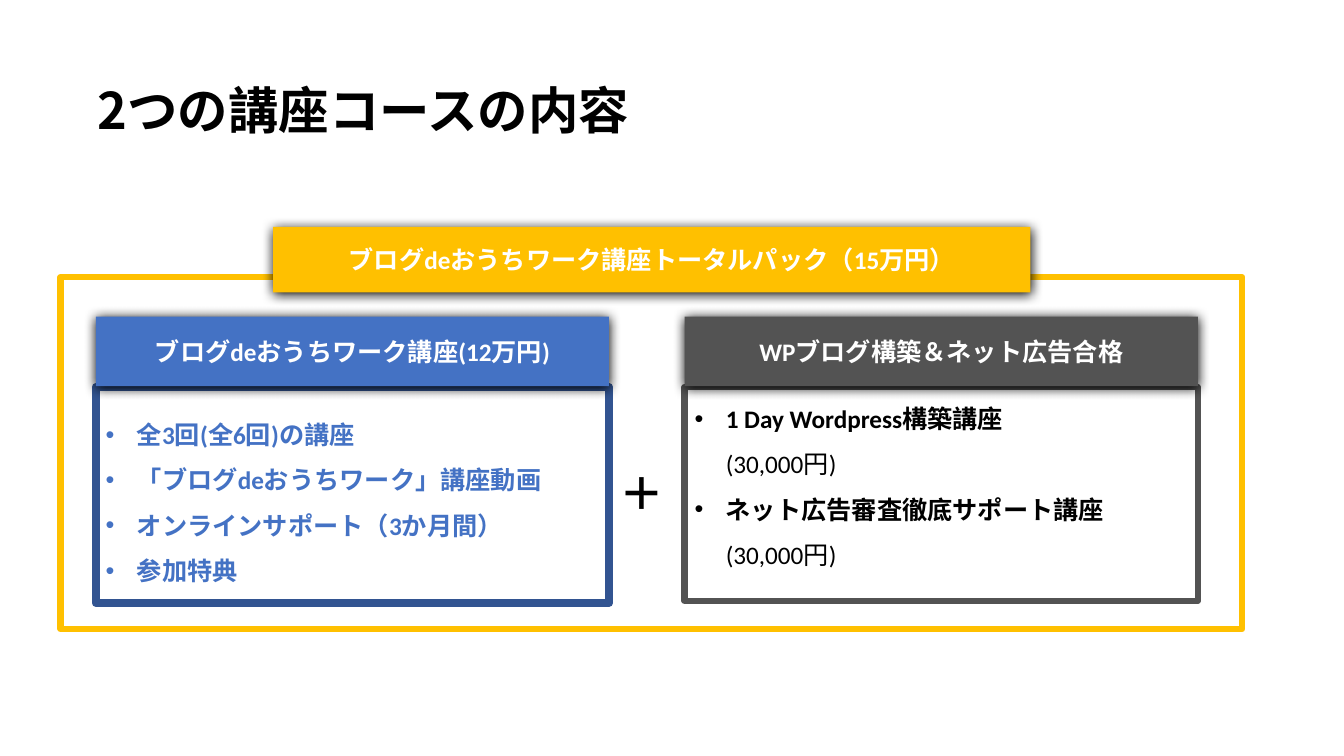
from lxml.etree import SubElement as Sub
from pptx import Presentation
from pptx.dml.color import RGBColor
from pptx.enum.shapes import MSO_SHAPE as Kind
from pptx.enum.text import MSO_ANCHOR as Anchor, PP_ALIGN as Align
from pptx.oxml.ns import qn
from pptx.util import Inches, Pt


def paint(form, tone):
    if hasattr(form, "solid"):
        form.solid()
        form = form.fore_color
    form.rgb = RGBColor.from_string(tone)


def write(para, text, tone, size=18, face="Calibri", bold=True):
    run = para.add_run()
    run.text = text
    look = {"name": face, "size": Pt(size), "bold": bold}
    for key, value in look.items():
        setattr(run.font, key, value)
    paint(run.font.color, tone)
    Sub(run.font._element, qn("a:ea"), typeface="Noto Sans CJK JP")


deck = Presentation()
deck.slide_width, deck.slide_height = Inches(13.33), Inches(7.5)
slide = deck.slides.add_slide(deck.slide_layouts[6])
shapes = slide.shapes

cards = [
    (0.95, 2.14, "325491", 6, "4472C4", 0.05, [
        ("全3回(全6回)の講座", ""),
        ("「ブログdeおうちワーク」講座動画", ""),
        ("オンラインサポート（3か月間）", ""),
        ("参加特典", ""),
    ]),
    (6.79, 2.12, "535353", 4.5, "000000", 0.35, [
        ("1 Day Wordpress構築講座", "(30,000円)"),
        ("ネット広告審査徹底サポート講座", "(30,000円)"),
    ]),
]
for left, high, edge, width, ink, base, items in cards:
    card = shapes.add_shape(Kind.RECTANGLE, Inches(left), Inches(3.84), Inches(5.09), Inches(high))
    card.shadow.inherit = False
    paint(card.fill, "FFFFFF")
    paint(card.line.color, edge)
    card.line.width = Pt(width)
    body = card.text_frame
    look = {"word_wrap": True, "vertical_anchor": Anchor.MIDDLE, "margin_bottom": Inches(base)}
    for key, value in look.items():
        setattr(body, key, value)
    for spot, (text, price) in enumerate(items):
        para = body.add_paragraph() if spot else body.paragraphs[0]
        para.alignment = Align.LEFT
        para.line_spacing = 1.5
        props = para._p.get_or_add_pPr()
        props.set("marL", str(Inches(0.31)))
        props.set("indent", str(-Inches(0.31)))
        Sub(props, qn("a:buFont"), typeface="Arial")
        Sub(props, qn("a:buChar"), char="•")
        write(para, text, ink)
        if price:
            para.add_line_break()
            write(para, price, ink, bold=False)

labels = [
    (0.92, 0.4, 11.5, 1.45, "2つの講座コースの内容", 36, "Noto Sans CJK JP", 0.9,
     {"word_wrap": True, "vertical_anchor": Anchor.MIDDLE,
      "margin_left": Inches(0.05), "margin_right": Inches(0.05)}),
    (6.05, 4.57, 0.65, 0.64, "＋", 32, "Calibri", 1, {"word_wrap": False}),
]
for left, top, wide, high, text, size, face, space, look in labels:
    box = shapes.add_textbox(Inches(left), Inches(top), Inches(wide), Inches(high))
    for key, value in look.items():
        setattr(box.text_frame, key, value)
    para = box.text_frame.paragraphs[0]
    para.line_spacing = space
    write(para, text, "000000", size, face)

frame = shapes.add_shape(Kind.RECTANGLE, Inches(0.6), Inches(2.75), Inches(11.72), Inches(3.49))
frame.shadow.inherit = False
frame.fill.background()
paint(frame.line.color, "FFC000")
frame.line.width = Pt(4.5)

heads = [
    (0.95, 3.14, 5.09, 0.69, "4472C4", "ブログdeおうちワーク講座(12万円)"),
    (2.71, 2.25, 7.51, 0.65, "FFC000", "ブログdeおうちワーク講座トータルパック（15万円）"),
    (6.79, 3.14, 5.09, 0.69, "535353", "WPブログ構築＆ネット広告合格"),
]
for left, top, wide, high, tone, text in heads:
    head = shapes.add_shape(Kind.RECTANGLE, Inches(left), Inches(top), Inches(wide), Inches(high))
    head.shadow.inherit = False
    paint(head.fill, tone)
    head.line.fill.background()
    glow = head._element.spPr.find(qn("a:effectLst"))
    shade = Sub(glow, qn("a:outerShdw"), blurRad=str(Pt(8.5)), dist=str(Pt(1)),
                dir="5400000", algn="ctr", rotWithShape="0")
    Sub(shade, qn("a:srgbClr"), val="000000")
    head.text_frame.vertical_anchor = Anchor.MIDDLE
    para = head.text_frame.paragraphs[0]
    para.alignment = Align.CENTER
    write(para, text, "FFFFFF")

deck.save("out.pptx")
